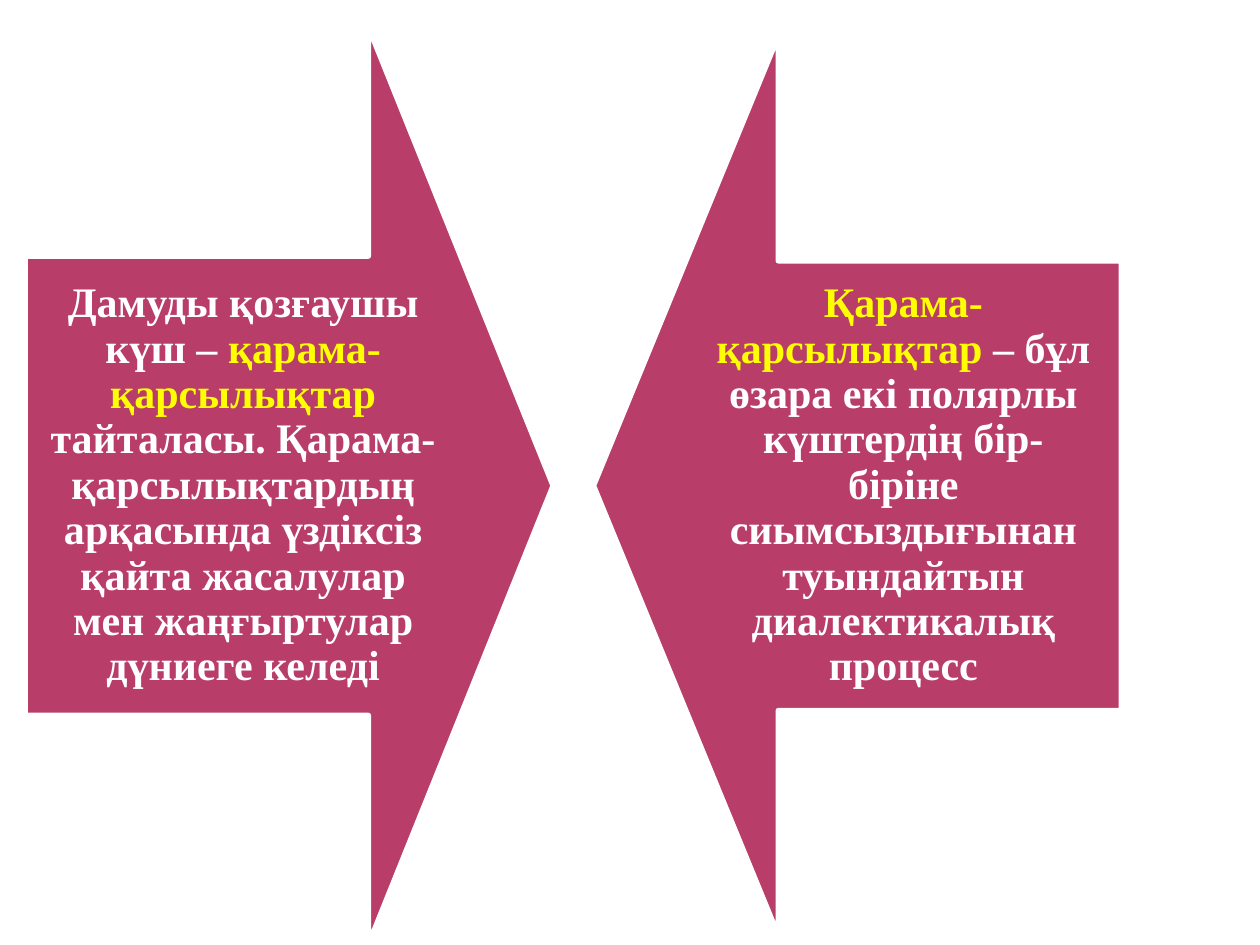
from pptx import Presentation
from pptx.dml.color import RGBColor
from pptx.enum.shapes import MSO_SHAPE
from pptx.enum.text import MSO_ANCHOR, PP_ALIGN
from pptx.util import Inches, Pt

DOWN_ARROW = MSO_SHAPE.DOWN_ARROW
MIDDLE = MSO_ANCHOR.MIDDLE
CENTER = PP_ALIGN.CENTER

ROSE = RGBColor(0xB8, 0x3D, 0x68)
WHITE = RGBColor(0xFF, 0xFF, 0xFF)
YELLOW = RGBColor(0xFF, 0xFF, 0x00)

MIDLINE = 3.855
ARROW_DEPTH = 4.19
TEXT_WIDTH = 3.46
INSET = 0.19

# The two arrows point at each other; span is the height seen on the page.
ARROWS = [
    {"left": 0.2, "span": 7.29, "rotation": 270, "text_left": 0.2,
     "spans": [("Дамуды қозғаушы күш – ", WHITE),
               ("қарама-қарсылықтар ", YELLOW),
               ("тайталасы. Қарама-қарсылықтардың арқасында үздіксіз "
                "қайта жасалулар мен жаңғыртулар дүниеге келеді", WHITE)]},
    {"left": 4.71, "span": 7.14, "rotation": 90, "text_left": 5.44,
     "spans": [("Қарама-қарсылықтар", YELLOW),
               (" – бұл өзара екі полярлы күштердің бір-біріне "
                "сиымсыздығынан туындайтын диалектикалық процесс", WHITE)]},
]


def add_arrow(page, left, span, rotation):
    """Add a down arrow turned sideways, its unrotated frame sharing the centre."""
    arrow = page.shapes.add_shape(
        DOWN_ARROW,
        Inches(left + (ARROW_DEPTH - span) / 2), Inches(MIDLINE - ARROW_DEPTH / 2),
        Inches(span), Inches(ARROW_DEPTH))
    arrow.rotation = rotation
    arrow.adjustments[0] = 0.5
    arrow.adjustments[1] = 0.35
    arrow.shadow.inherit = False
    arrow.fill.solid()
    arrow.fill.fore_color.rgb = ROSE
    arrow.line.color.rgb = WHITE
    arrow.line.width = Pt(3.15)


def add_text(page, left, height, spans):
    box = page.shapes.add_textbox(
        Inches(left), Inches(MIDLINE - height / 2),
        Inches(TEXT_WIDTH), Inches(height))
    frame = box.text_frame
    frame.word_wrap = True
    frame.vertical_anchor = MIDDLE
    frame.margin_left = frame.margin_right = Inches(INSET)
    frame.margin_top = frame.margin_bottom = Inches(INSET)
    para = frame.paragraphs[0]
    para.alignment = CENTER
    para.line_spacing = 0.9
    para.font.name = "Times New Roman"
    para.font.size = Pt(24)
    para.font.bold = True
    for text, color in spans:
        span = para.add_run()
        span.text = text
        span.font.color.rgb = color


def main():
    deck = Presentation()
    deck.slide_width = Inches(10)
    deck.slide_height = Inches(7.5)
    page = deck.slides.add_slide(deck.slide_layouts[6])
    for item in ARROWS:
        add_arrow(page, item["left"], item["span"], item["rotation"])
        add_text(page, item["text_left"], item["span"] / 2, item["spans"])
    deck.save("out.pptx")


if __name__ == "__main__":
    main()
